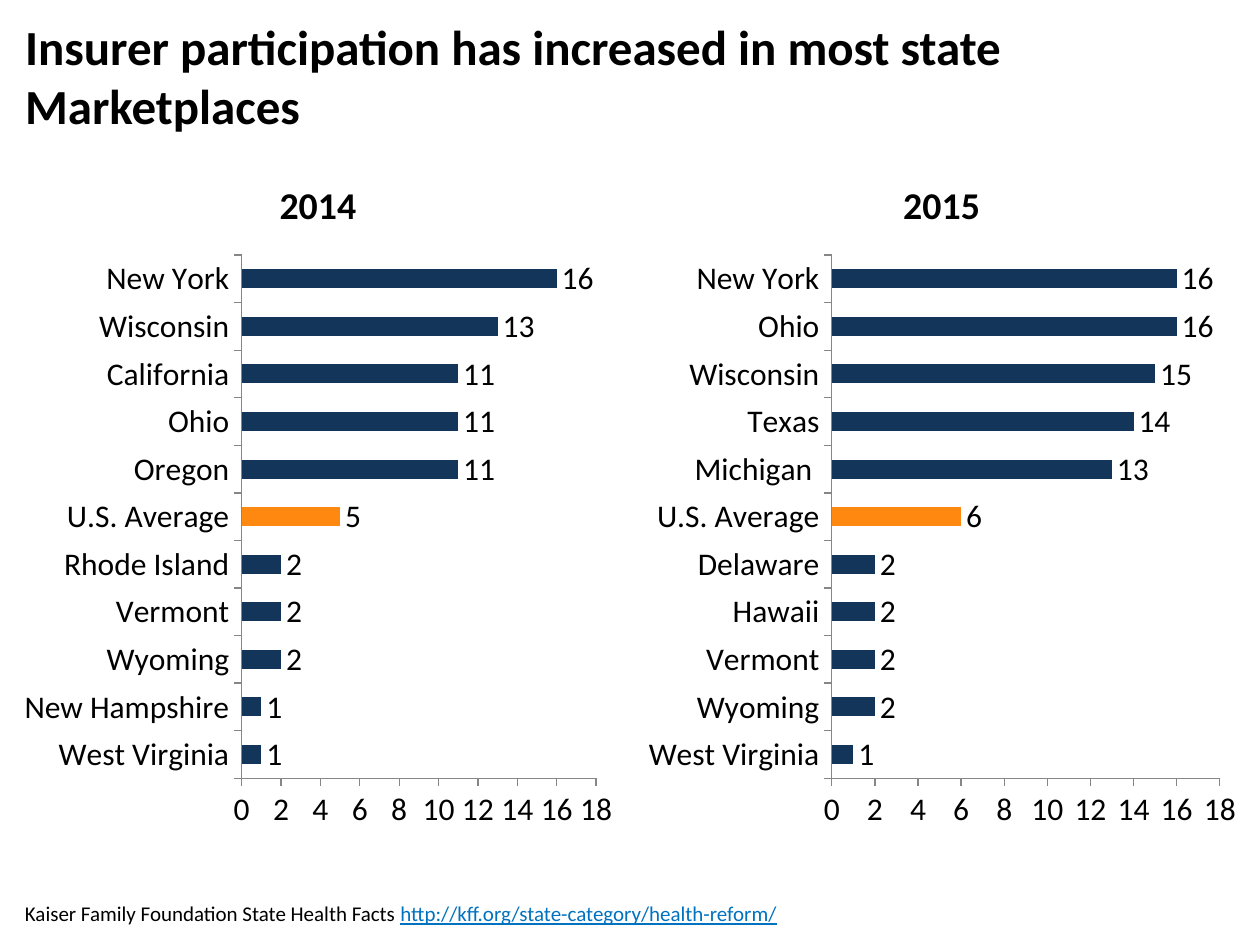
from pptx import Presentation
from pptx.chart.data import CategoryChartData as ChartData
from pptx.dml.color import RGBColor
from pptx.enum.chart import XL_CHART_TYPE as Kind, XL_LABEL_POSITION as Pos, XL_TICK_MARK as Tick
from pptx.enum.text import MSO_ANCHOR as Anchor, MSO_AUTO_SIZE as Auto, PP_ALIGN as Align
from pptx.oxml import parse_xml
from pptx.oxml.ns import nsdecls
from pptx.util import Inches, Pt

BLACK = RGBColor(0x00, 0x00, 0x00)
NAVY = RGBColor(0x13, 0x35, 0x59)
ORANGE = RGBColor(0xFF, 0x88, 0x11)
GRAY = RGBColor(0x86, 0x86, 0x86)
BLUE = RGBColor(0x00, 0x72, 0xC0)

MEAN = "U.S. Average"
YEARS = [
    ("2014", 0.1, (0.375, 0.58), [
        ("West Virginia", 1), ("New Hampshire", 1), ("Wyoming", 2),
        ("Vermont", 2), ("Rhode Island", 2), (MEAN, 5), ("Oregon", 11),
        ("Ohio", 11), ("California", 11), ("Wisconsin", 13), ("New York", 16)]),
    ("2015", 5.05, (0.32, 0.635), [
        ("West Virginia", 1), ("Wyoming", 2), ("Vermont", 2), ("Hawaii", 2),
        ("Delaware", 2), (MEAN, 6), ("Michigan ", 13), ("Texas", 14),
        ("Wisconsin", 15), ("Ohio", 16), ("New York", 16)]),
]


def apply(item, form):
    for key, value in form.items():
        setattr(item, key, value)


def style(font, size, color=BLACK, **form):
    apply(font, {"name": "Calibri", "size": Pt(size), **form})
    font.color.rgb = color


def paint(item, color):
    item.format.fill.solid()
    item.format.fill.fore_color.rgb = color


def place(chart, left, width):
    area = chart.element.chart.plotArea
    for old in area.findall("{*}layout"):
        area.remove(old)
    spots = {"x": left, "y": 0.15, "w": width, "h": 0.755}
    marks = "".join(f'<c:{key} val="{value}"/>' for key, value in spots.items())
    area.insert(0, parse_xml(
        f'<c:layout {nsdecls("c")}><c:manualLayout><c:layoutTarget val="inner"/>'
        f'<c:xMode val="edge"/><c:yMode val="edge"/>{marks}</c:manualLayout></c:layout>'))


def add_bars(slide, year, left, span, rows):
    names, counts = zip(*rows)
    data = ChartData()
    data.categories = names
    data.add_series(year, counts)
    frame = slide.shapes.add_chart(
        Kind.BAR_CLUSTERED, Inches(left), Inches(1.2), Inches(4.85), Inches(5.5), data)
    chart = frame.chart
    style(chart.font, 18)
    apply(chart, {"has_legend": False, "has_title": True})
    head = chart.chart_title
    head.include_in_layout = False
    head.text_frame.text = year
    style(head.text_frame.paragraphs[0].runs[0].font, 21.6, bold=True)
    for axis in (chart.category_axis, chart.value_axis):
        apply(axis, {"has_major_gridlines": False, "major_tick_mark": Tick.OUTSIDE,
                     "minor_tick_mark": Tick.NONE})
        axis.format.line.color.rgb = GRAY
        axis.format.line.width = Pt(0.75)
    apply(chart.value_axis, {"minimum_scale": 0, "maximum_scale": 18, "major_unit": 2})
    plot = chart.plots[0]
    apply(plot, {"gap_width": 150, "vary_by_categories": False, "has_data_labels": True})
    apply(plot.data_labels, {"show_value": True, "position": Pos.OUTSIDE_END})
    style(plot.data_labels.font, 18)
    bars = plot.series[0]
    paint(bars, NAVY)
    paint(bars.points[names.index(MEAN)], ORANGE)
    place(chart, *span)


def add_title(slide, text):
    title = slide.shapes.title
    apply(title, {"left": Inches(0.1), "top": Inches(0.1),
                  "width": Inches(9.8), "height": Inches(1)})
    frame = title.text_frame
    frame.text = text
    apply(frame, {"auto_size": Auto.NONE, "vertical_anchor": Anchor.MIDDLE})
    line = frame.paragraphs[0]
    line.alignment = Align.LEFT
    style(line.runs[0].font, 28, bold=True)


def add_source(slide, parts):
    box = slide.shapes.add_textbox(Inches(0.1), Inches(6.8), Inches(9.1), Inches(0.6))
    frame = box.text_frame
    apply(frame, {"word_wrap": True, "vertical_anchor": Anchor.BOTTOM})
    for text, color, under in parts:
        run = frame.paragraphs[0].add_run()
        run.text = text
        style(run.font, 12, color, underline=under)


def main():
    deck = Presentation()
    apply(deck, {"slide_width": Inches(10), "slide_height": Inches(7.5)})
    slide = deck.slides.add_slide(deck.slide_layouts[5])
    add_title(slide, "Insurer participation has increased in most state Marketplaces")
    for year in YEARS:
        add_bars(slide, *year)
    add_source(slide, [
        ("Kaiser Family Foundation State Health Facts ", BLACK, False),
        ("http://kff.org/state-category/health-reform/", BLUE, True)])
    deck.save("out.pptx")


if __name__ == "__main__":
    main()
